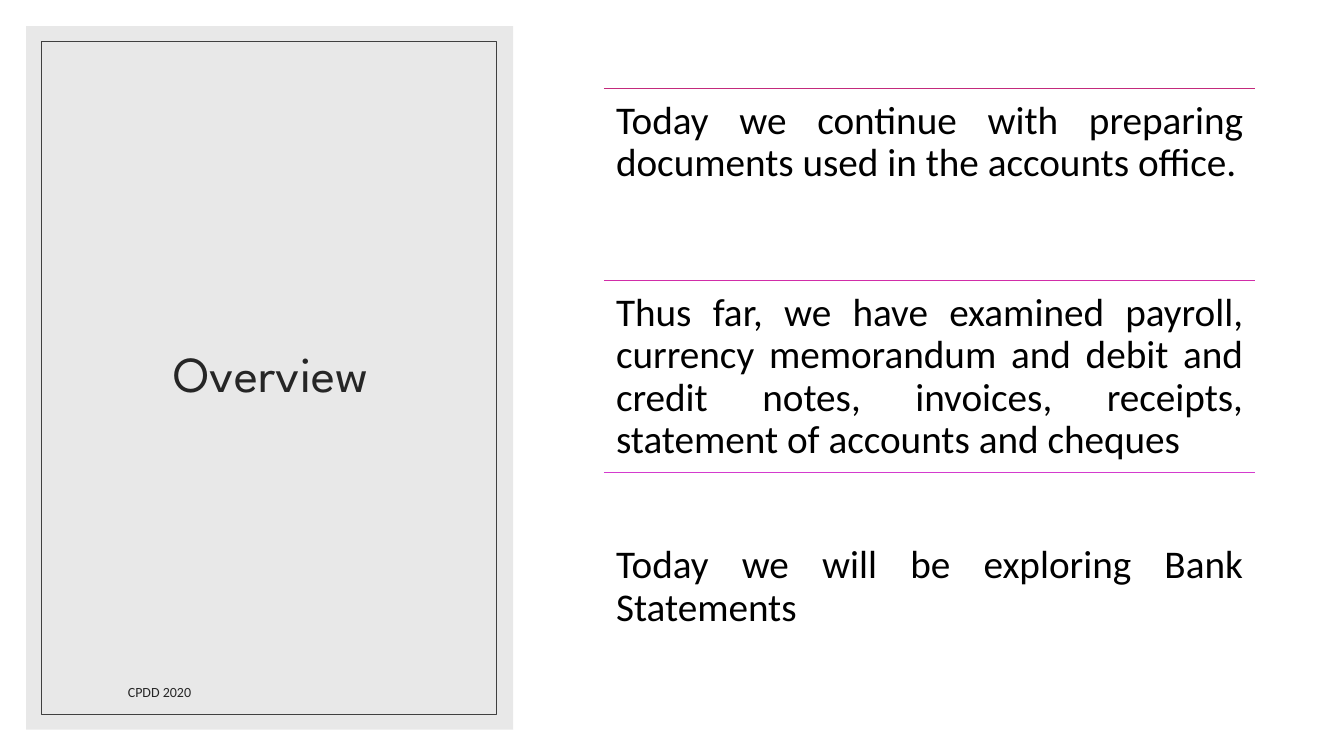
from lxml import etree
from pptx import Presentation
from pptx.dml.color import RGBColor
from pptx.enum.shapes import MSO_CONNECTOR, MSO_SHAPE
from pptx.enum.text import MSO_ANCHOR, PP_ALIGN
from pptx.oxml.ns import qn
from pptx.util import Inches, Pt

WHITE = RGBColor(0xFF, 0xFF, 0xFF)
BLACK = RGBColor(0x00, 0x00, 0x00)
PANEL_GREY = RGBColor(0xD9, 0xD9, 0xD9)
FRAME_GREY = RGBColor(0x40, 0x40, 0x40)
TITLE_GREY = RGBColor(0x26, 0x26, 0x26)

# Rule colour, text, and drop of the text below its rule in inches
TOPICS = [
    (RGBColor(0xC3, 0x2A, 0x7C),
     "Today we continue with preparing documents used in the accounts office.", 0),
    (RGBColor(0xD1, 0x2D, 0xA8),
     "Thus far, we have examined payroll, currency memorandum and debit and "
     "credit notes, invoices, receipts, statement of accounts and cheques", 0),
    (RGBColor(0xD4, 0x3B, 0xCE),
     "Today we will be exploring Bank Statements", 0.6),
]


def add_text(slide, box, text, font_name, size, color, align=PP_ALIGN.LEFT,
             anchor=MSO_ANCHOR.TOP, line_spacing=None, inset=None):
    shape = slide.shapes.add_textbox(*map(Inches, box))
    frame = shape.text_frame
    frame.word_wrap = True
    frame.vertical_anchor = anchor
    if inset is not None:
        frame.margin_left = frame.margin_right = Inches(inset)
        frame.margin_top = frame.margin_bottom = Inches(inset)
    paragraph = frame.paragraphs[0]
    paragraph.text = text
    paragraph.alignment = align
    paragraph.line_spacing = line_spacing
    paragraph.font.name = font_name
    paragraph.font.size = Pt(size)
    paragraph.font.color.rgb = color


def add_rectangle(slide, box):
    shape = slide.shapes.add_shape(MSO_SHAPE.RECTANGLE, *map(Inches, box))
    shape.shadow.inherit = False
    return shape


def add_title_panel(slide, left, top, width, height):
    panel = add_rectangle(slide, (left, top, width, height))
    panel.fill.solid()
    panel.fill.fore_color.rgb = PANEL_GREY
    panel.line.fill.background()
    color = next(panel._element.spPr.iter(qn("a:srgbClr")))
    etree.SubElement(color, qn("a:alpha")).set("val", "60000")

    add_text(slide, (left + 0.37, top + 0.35, width - 0.71, height - 0.74),
             "Overview", "League Spartan", 36, TITLE_GREY,
             PP_ALIGN.CENTER, MSO_ANCHOR.MIDDLE, 0.9)

    frame = add_rectangle(
        slide, (left + 0.15, top + 0.15, width - 0.32, height - 0.3))
    frame.fill.background()
    frame.line.color.rgb = FRAME_GREY
    frame.line.width = Pt(0.5)


def add_topic_list(slide, left, top, width, height):
    """Stack the topics in equal rows, each under a coloured rule."""
    row_height = height / len(TOPICS)
    for index, (color, text, drop) in enumerate(TOPICS):
        row_top = top + index * row_height
        rule = slide.shapes.add_connector(
            MSO_CONNECTOR.STRAIGHT, Inches(left), Inches(row_top),
            Inches(left + width), Inches(row_top))
        rule.line.color.rgb = color
        rule.line.width = Pt(1)
        etree.SubElement(rule._element.spPr, qn("a:effectLst"))
        add_text(slide, (left, row_top + drop, width, row_height - drop),
                 text, "Calibri", 28, BLACK, PP_ALIGN.JUSTIFY,
                 line_spacing=0.9, inset=0.12)


def add_footer(slide, left, top, width, height):
    add_text(slide, (left, top, width, height), "CPDD 2020", "Calibri", 10,
             TITLE_GREY, anchor=MSO_ANCHOR.BOTTOM)


def main():
    presentation = Presentation()
    presentation.slide_width = Inches(13.33)
    presentation.slide_height = Inches(7.5)
    slide = presentation.slides.add_slide(presentation.slide_layouts[6])
    slide.background.fill.solid()
    slide.background.fill.fore_color.rgb = WHITE
    add_title_panel(slide, 0.26, 0.26, 4.83, 6.98)
    add_topic_list(slide, 5.99, 0.88, 6.46, 5.71)
    add_footer(slide, 1.17, 6.6, 6.36, 0.4)
    presentation.save("out.pptx")


if __name__ == "__main__":
    main()
